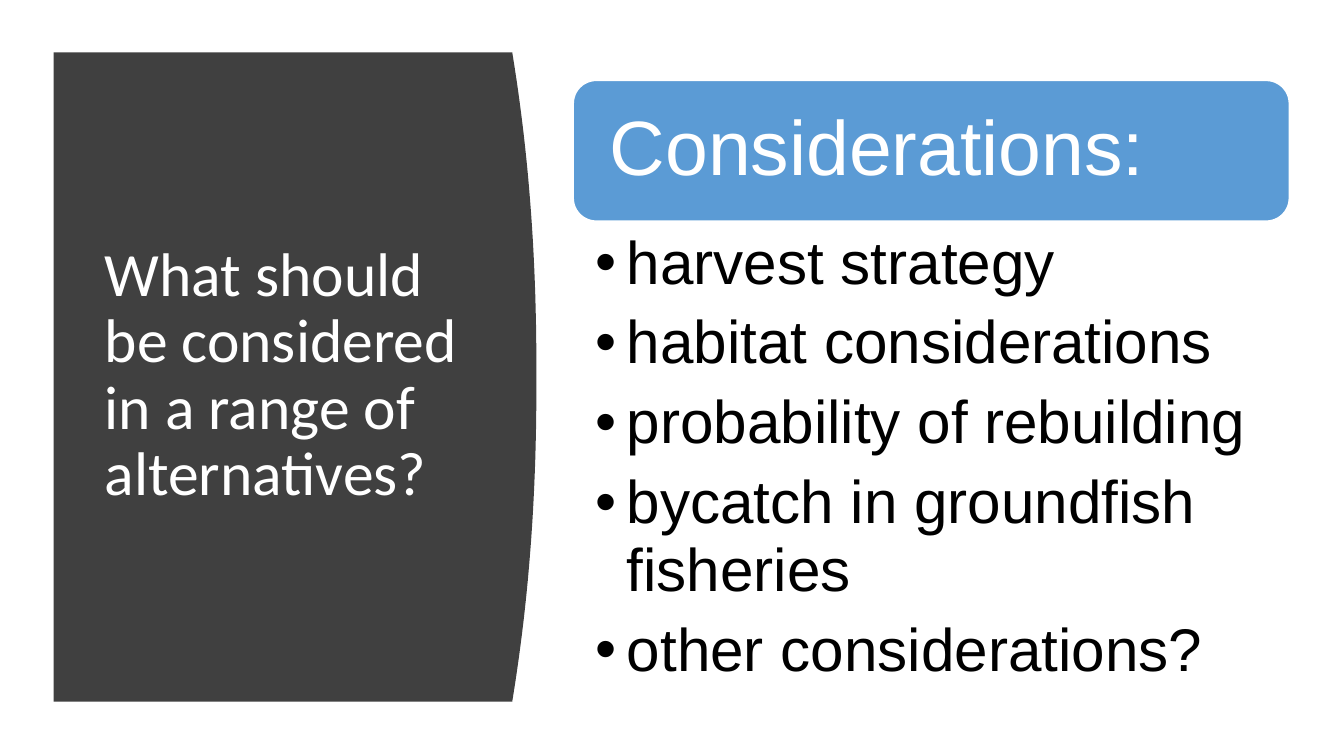
from lxml import etree
from pptx import Presentation
from pptx.dml.color import RGBColor
from pptx.enum.shapes import MSO_SHAPE
from pptx.enum.text import MSO_ANCHOR, MSO_AUTO_SIZE, PP_ALIGN
from pptx.oxml.ns import qn
from pptx.util import Cm, Pt

ROUNDED = MSO_SHAPE.ROUNDED_RECTANGLE
MIDDLE, TOP = MSO_ANCHOR.MIDDLE, MSO_ANCHOR.TOP
LEFT = PP_ALIGN.LEFT
NO_FIT = MSO_AUTO_SIZE.NONE
COLORS = {"panel": "404040", "header": "5B9BD5", "light": "FFFFFF", "dark": "000000"}
TITLE_ONLY = 5
CURVE_STEPS = 48
CONSIDERATIONS = [
    "harvest strategy",
    "habitat considerations",
    "probability of rebuilding",
    "bycatch in groundfish fisheries",
    "other considerations?",
]


def color(key):
    """Return the named palette colour."""
    return RGBColor.from_string(COLORS[key])


def set_text(frame, lines, font, size, ink, spacing, anchor, insets):
    """Write and format paragraphs in a text frame, with insets in cm."""
    frame.text = "\n".join(lines)
    frame.word_wrap = True
    frame.auto_size = NO_FIT
    frame.vertical_anchor = anchor
    (frame.margin_left, frame.margin_top,
     frame.margin_right, frame.margin_bottom) = map(Cm, insets)
    for paragraph in frame.paragraphs:
        paragraph.alignment = LEFT
        paragraph.line_spacing = spacing
        paragraph.space_before = Pt(0)
        for run in paragraph.runs:
            run.font.name = font
            run.font.size = Pt(size)
            run.font.color.rgb = color(ink)


def add_bullet(paragraph, indent):
    """Give a paragraph a round bullet with a hanging indent in cm."""
    properties = paragraph._p.get_or_add_pPr()
    properties.set("marL", str(Cm(indent)))
    properties.set("indent", str(-Cm(indent)))
    etree.SubElement(properties, qn("a:buFont")).set("typeface", "Arial")
    etree.SubElement(properties, qn("a:buChar")).set("char", "•")


def add_title_panel(slide, left, top, width, height):
    """Draw the dark panel with a bulging right edge and place the title on it."""
    bulge = 0.61
    edge = []
    for step in range(CURVE_STEPS + 1):
        share = step / CURVE_STEPS
        x = left + width - bulge * abs(2 * share - 1) ** 2.2
        edge.append((Cm(x), Cm(top + height * share)))
    builder = slide.shapes.build_freeform(Cm(left), Cm(top))
    builder.add_line_segments(edge + [(Cm(left), Cm(top + height))], close=True)
    panel = builder.convert_to_shape()
    panel.shadow.inherit = False
    panel.fill.solid()
    panel.fill.fore_color.rgb = color("panel")
    panel.line.fill.background()

    title = slide.shapes.title
    title.left, title.top = Cm(left + 1.04), Cm(top + 1.5)
    title.width, title.height = Cm(9.5), Cm(height - 3.05)
    set_text(title.text_frame, ["What should be considered in a range of alternatives?"],
             "Calibri", 44, "light", 0.9, MIDDLE, (0.25, 0.13, 0.25, 0.13))
    panel._element.addnext(title._element)


def add_considerations(slide, left, top, width, height):
    """Place the header bar and the bulleted list under it."""
    header_height = 3.58
    header = slide.shapes.add_shape(ROUNDED, Cm(left), Cm(top), Cm(width), Cm(header_height))
    header.shadow.inherit = False
    header.fill.solid()
    header.fill.fore_color.rgb = color("header")
    header.line.color.rgb = color("light")
    header.line.width = Pt(2)
    set_text(header.text_frame, ["Considerations:"], "Arial", 55, "light", 0.9,
             MIDDLE, (0.76, 0.76, 0.76, 0.76))

    points = slide.shapes.add_textbox(Cm(left), Cm(top + header_height),
                                      Cm(width), Cm(height - header_height))
    set_text(points.text_frame, CONSIDERATIONS, "Arial", 43, "dark", 0.94,
             TOP, (0.58, 0.2, 1.09, 0.2))
    for paragraph in points.text_frame.paragraphs:
        paragraph.space_after = Pt(8.6)
        add_bullet(paragraph, 0.79)


def main():
    """Build the slide and save it."""
    deck = Presentation()
    deck.slide_width, deck.slide_height = Cm(33.87), Cm(19.05)
    slide = deck.slides.add_slide(deck.slide_layouts[TITLE_ONLY])
    add_title_panel(slide, 1.35, 1.32, 12.17, 16.36)
    add_considerations(slide, 14.43, 2.01, 18.08, 14.96)
    deck.save("out.pptx")


if __name__ == "__main__":
    main()
